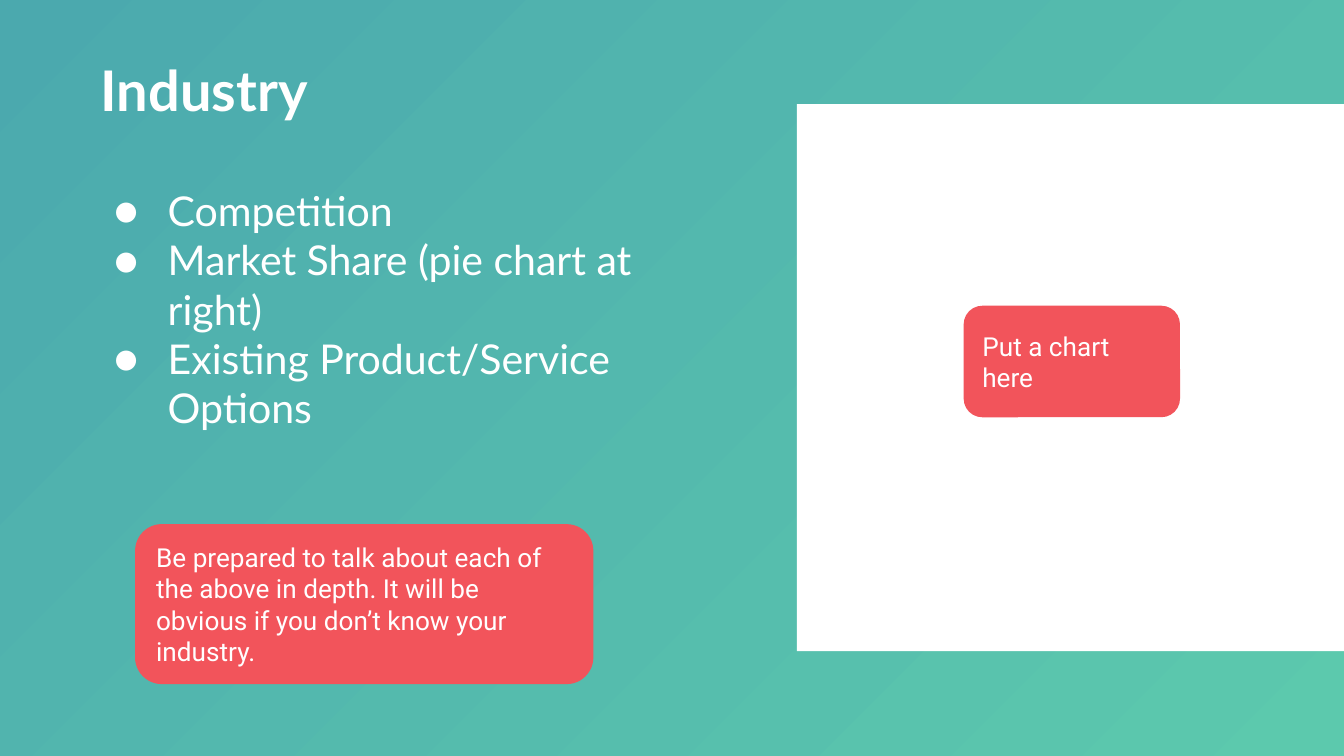
from dataclasses import dataclass

from lxml import etree
from pptx import Presentation
from pptx.dml.color import RGBColor
from pptx.enum.shapes import MSO_SHAPE
from pptx.enum.text import MSO_ANCHOR, MSO_AUTO_SIZE, PP_ALIGN
from pptx.oxml.ns import qn
from pptx.util import Emu, Pt

RECT, ROUND = MSO_SHAPE.RECTANGLE, MSO_SHAPE.ROUNDED_RECTANGLE
TOP, MIDDLE = MSO_ANCHOR.TOP, MSO_ANCHOR.MIDDLE
LEFT, FIXED = PP_ALIGN.LEFT, MSO_AUTO_SIZE.NONE

WHITE = RGBColor(0xFF, 0xFF, 0xFF)
RED = RGBColor(0xF2, 0x54, 0x5B)
GREEN = RGBColor(0x5C, 0xC9, 0xAD)
TEAL = RGBColor(0x4B, 0xA9, 0xAE)

SCALE = 4572  # EMU in one px, 200 px to the inch
WIDTH, HEIGHT = 2000, 1125
INSET = 20
TITLE_ONLY = 5


def px(count: int) -> Emu:
    return Emu(count * SCALE)


@dataclass(frozen=True)
class Box:
    left: int
    top: int
    width: int
    height: int

    def emu(self) -> tuple[Emu, ...]:
        return tuple(px(n) for n in (self.left, self.top, self.width, self.height))


@dataclass(frozen=True)
class Note:
    box: Box
    text: str


TITLE = Box(130, 63, 620, 132)
LIST = Box(130, 256, 928, 702)
PANEL = Box(1186, 155, 814, 814)
TOPICS = (
    "Competition",
    "Market Share (pie chart at right)",
    "Existing Product/Service Options",
)
NOTES = (
    Note(Box(1434, 455, 322, 166), "Put a chart here"),
    Note(
        Box(201, 780, 682, 238),
        "Be prepared to talk about each of the above in depth. "
        "It will be obvious if you don’t know your industry.",
    ),
)


def add_bullet(para, font: str) -> None:
    props = para._p.get_or_add_pPr()
    props.set("marL", str(px(100)))
    props.set("indent", str(px(-80)))
    tint = etree.SubElement(props, qn("a:buClr"))
    etree.SubElement(tint, qn("a:srgbClr"), val=str(WHITE))
    etree.SubElement(props, qn("a:buFont"), typeface=font)
    etree.SubElement(props, qn("a:buChar"), char="●")


def put_text(shape, *lines: str, font: str = "Lato", size: int = 22,
             bold: bool = False, anchor=TOP, bullet: bool = False) -> None:
    frame = shape.text_frame
    frame.word_wrap = True
    frame.auto_size = FIXED
    frame.vertical_anchor = anchor
    frame.margin_left = frame.margin_right = px(INSET)
    frame.margin_top = frame.margin_bottom = px(INSET)
    frame.text = "\n".join(lines)
    for para in frame.paragraphs:
        para.alignment = LEFT
        style = para.runs[0].font
        style.name, style.size, style.bold = font, Pt(size), bold
        style.color.rgb = WHITE
        if bullet:
            add_bullet(para, font)


def add_block(slide, kind, box: Box, fill: RGBColor):
    shape = slide.shapes.add_shape(kind, *box.emu())
    shape.shadow.inherit = False
    shape.fill.solid()
    shape.fill.fore_color.rgb = fill
    shape.line.fill.background()
    return shape


def add_note(slide, note: Note) -> None:
    shape = add_block(slide, ROUND, note.box, RED)
    shape.adjustments[0] = 0.167
    put_text(shape, note.text, font="Roboto", size=14, anchor=MIDDLE)


def paint_back(slide) -> None:
    fill = slide.background.fill
    fill.gradient()
    fill.gradient_angle = 135
    for stop, color in zip(fill.gradient_stops, (GREEN, TEAL)):
        stop.color.rgb = color


def main() -> None:
    deck = Presentation()
    deck.slide_width, deck.slide_height = px(WIDTH), px(HEIGHT)
    slide = deck.slides.add_slide(deck.slide_layouts[TITLE_ONLY])
    paint_back(slide)

    title = slide.shapes.title
    title.left, title.top, title.width, title.height = TITLE.emu()
    put_text(title, "Industry", size=30, bold=True)

    add_block(slide, RECT, PANEL, WHITE)
    topics = slide.shapes.add_textbox(*LIST.emu())
    put_text(topics, *TOPICS, bullet=True)
    for note in NOTES:
        add_note(slide, note)

    deck.save("out.pptx")


if __name__ == "__main__":
    main()
